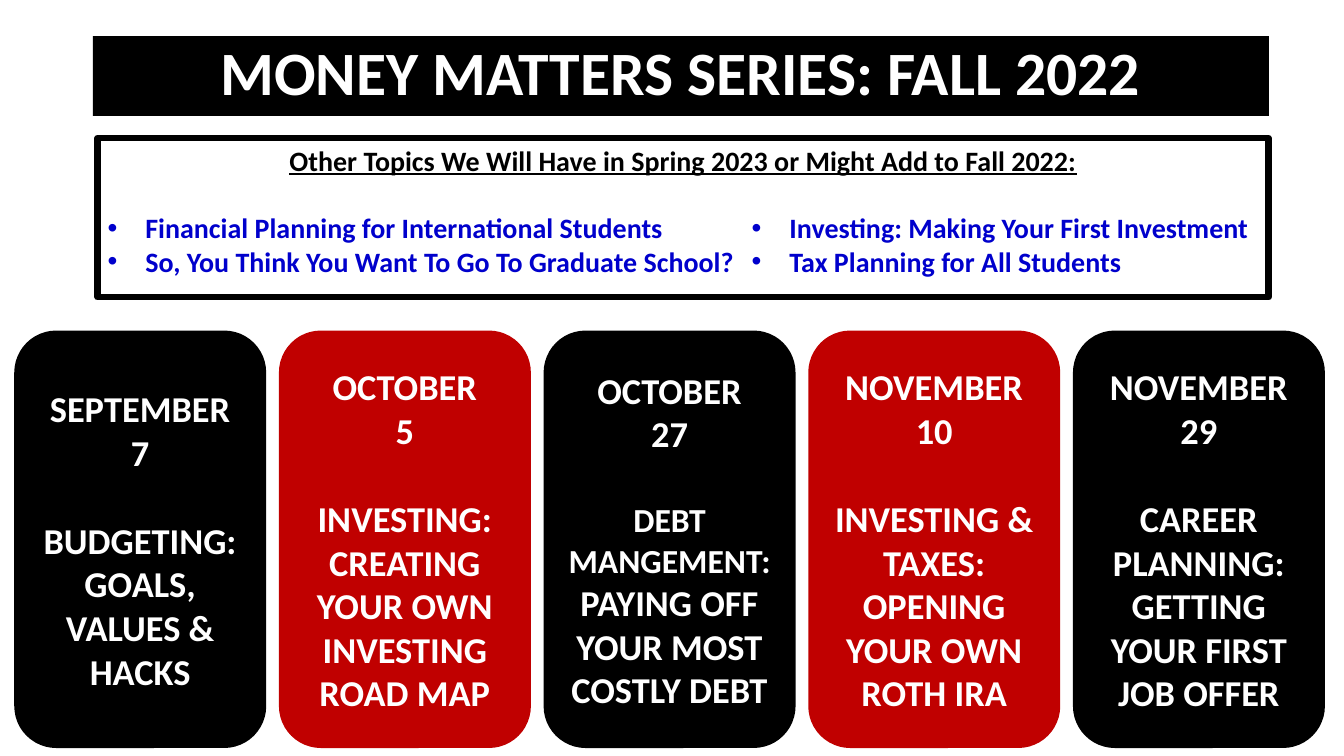
import pptx
import pptx.util
import pptx.dml.color
import pptx.enum.shapes
import pptx.enum.text
import pptx.oxml.ns
from lxml import etree
from pptx.util import Cm, Pt

COLORS = {"black": "000000", "white": "FFFFFF", "red": "C00000", "blue": "0000CC"}
FONT = "Calibri"
PP_ALIGN = pptx.enum.text.PP_ALIGN
ANCHOR = pptx.enum.text.MSO_ANCHOR


def rgb(name):
    return pptx.dml.color.RGBColor.from_string(COLORS[name])


def style_paragraph(paragraph, size, color, bullet=None, centered=False):
    """Set bullet and indent (for list text), alignment and the font of every run."""
    if bullet is not None:
        properties = paragraph._p.get_or_add_pPr()
        indent = Cm(0.95) if bullet else 0
        properties.set("marL", str(indent))
        properties.set("indent", str(-indent))
        tag = "a:buChar" if bullet else "a:buNone"
        element = etree.SubElement(properties, pptx.oxml.ns.qn(tag))
        if bullet:
            element.set("char", bullet)
        paragraph.space_before = Pt(0)
    paragraph.alignment = PP_ALIGN.CENTER if centered else PP_ALIGN.LEFT
    for run in paragraph.runs:
        run.font.name = FONT
        run.font.size = Pt(size)
        run.font.bold = True
        run.font.color.rgb = rgb(color)


presentation = pptx.Presentation()
presentation.slide_width = Cm(33.87)
presentation.slide_height = Cm(19.05)
slide = presentation.slides.add_slide(presentation.slide_layouts[3])
title, topics, more_topics = slide.placeholders

# Placeholder positions: left, top, width, height
frames = [
    (title, 2.34, 0.91, 29.64, 2.01),
    (topics, 2.46, 3.48, 29.51, 4.01),
    (more_topics, 18.69, 5.18, 13.28, 2),
]
for placeholder, left, top, width, height in frames:
    placeholder.left, placeholder.top = Cm(left), Cm(top)
    placeholder.width, placeholder.height = Cm(width), Cm(height)
    placeholder.text_frame.auto_size = pptx.enum.text.MSO_AUTO_SIZE.NONE
    placeholder.text_frame.word_wrap = True
    placeholder.text_frame.vertical_anchor = ANCHOR.TOP

# Title banner
title.fill.solid()
title.fill.fore_color.rgb = rgb("black")
title.text_frame.text = "MONEY MATTERS SERIES: FALL 2022"
title.text_frame.vertical_anchor = ANCHOR.MIDDLE
title.text_frame.paragraphs[0].line_spacing = 0.9
style_paragraph(title.text_frame.paragraphs[0], 44, "white", centered=True)

# Framed list of other topics, in two columns
topics.line.color.rgb = rgb("black")
topics.line.width = Pt(4.5)
topics.text_frame.text = "\n".join([
    "Other Topics We Will Have in Spring 2023 or Might Add to Fall 2022:",
    "Financial Planning for International Students",
    "So, You Think You Want To Go To Graduate School?",
])
more_topics.text_frame.text = "\n".join([
    "Investing: Making Your First Investment",
    "Tax Planning for All Students",
])
heading, *left_items = topics.text_frame.paragraphs
style_paragraph(heading, 20, "black", bullet="", centered=True)
heading.runs[0].font.underline = True
heading.space_after = Pt(24.4)
for paragraph in [*left_items, *more_topics.text_frame.paragraphs]:
    style_paragraph(paragraph, 20, "blue", bullet="•")

# Session cards: date, then topic paragraphs
sessions = [
    ("SEPTEMBER\v7", ["BUDGETING:", "GOALS, VALUES & HACKS"]),
    ("OCTOBER\v5", ["INVESTING:", "CREATING YOUR OWN INVESTING ROAD MAP"]),
    ("OCTOBER\v27", ["DEBT MANGEMENT: "]),
    ("NOVEMBER 10", ["INVESTING & TAXES:", "OPENING YOUR OWN ROTH IRA"]),
    ("NOVEMBER\v29", ["CAREER PLANNING: GETTING YOUR FIRST JOB OFFER"]),
]
cards = []
for index, (date, topic) in enumerate(sessions):
    card = slide.shapes.add_shape(
        pptx.enum.shapes.MSO_SHAPE.ROUNDED_RECTANGLE,
        Cm(0.36 + 6.67 * index), Cm(8.33), Cm(6.35), Cm(10.52))
    card.shadow.inherit = False
    card.fill.solid()
    card.fill.fore_color.rgb = rgb("red" if index % 2 else "black")
    card.line.fill.background()
    card.text_frame.word_wrap = True
    card.text_frame.vertical_anchor = ANCHOR.MIDDLE
    card.text_frame.text = "\n".join([date, *topic])
    for paragraph in card.text_frame.paragraphs:
        style_paragraph(paragraph, 26, "white", centered=True)
    card.text_frame.paragraphs[1].space_before = Pt(31.7)
    cards.append(card)

# The debt topic opens in a smaller size
debt_topic = cards[2].text_frame.paragraphs[1]
debt_topic.add_run().text = "PAYING OFF YOUR MOST COSTLY DEBT"
style_paragraph(debt_topic, 26, "white", centered=True)
debt_topic.runs[0].font.size = Pt(24)

presentation.save("out.pptx")
